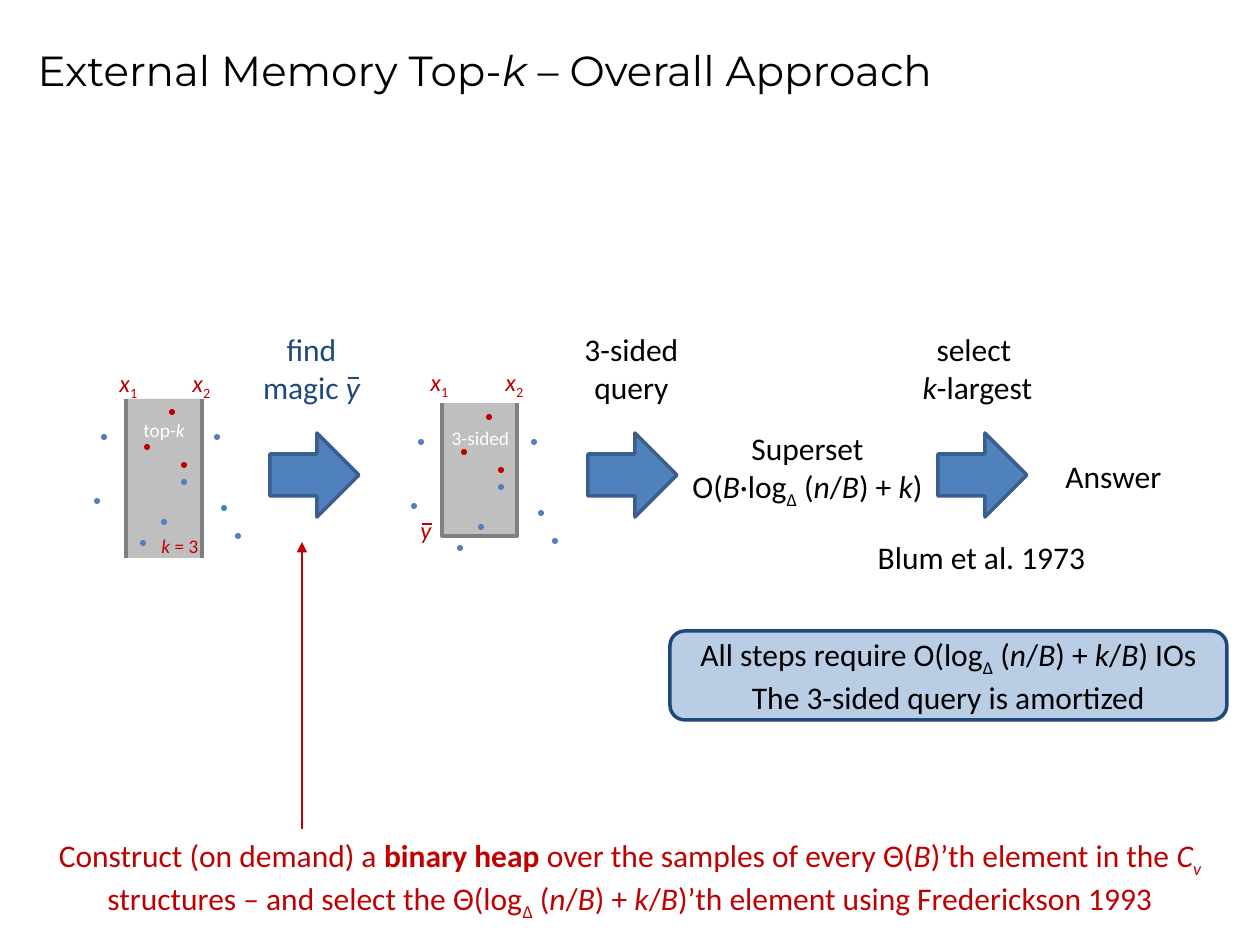
from lxml.etree import SubElement
from pptx import Presentation
from pptx.dml.color import RGBColor
from pptx.enum.shapes import MSO_CONNECTOR, MSO_SHAPE
from pptx.enum.text import MSO_ANCHOR, MSO_AUTO_SIZE, PP_ALIGN
from pptx.oxml.ns import qn
from pptx.util import Emu, Pt

PX = 914400 // 126
BLACK, WHITE, RED, NAVY, BLUE = "000000", "FFFFFF", "C00000", "1F497D", "4F81BD"
GREY, EDGE = "BFBFBF", "808080"
LEFT, CENTER = PP_ALIGN.LEFT, PP_ALIGN.CENTER

# Runs are (text, style): i italic, b bold, s subscript
TITLE = [("External Memory Top-", ""), ("k", "i"), (" – Overall Approach", "")]
LOG_N_B = [("Δ", "s"), (" (", ""), ("n", "i"), ("/", ""), ("B", "i"), (") + ", ""), ("k", "i")]
LOG_K_B = LOG_N_B + [("/", ""), ("B", "i")]
X1, X2 = [("x", "i"), ("1", "s")], [("x", "i"), ("2", "s")]

# Box, size, colour, alignment, paragraphs
BAR_LABELS = [
    ((126, 412, 76, 37), 11, WHITE, CENTER, [[("top-", ""), ("k", "i")]]),
    ((142, 528, 76, 37), 11, RED, CENTER, [[("k", "i"), (" = 3", "")]]),
    ((442, 420, 77, 45), 11, WHITE, CENTER, [[("3-sided", "")]]),
]
LABELS = [
    ((107, 362, 49, 43), 14, RED, LEFT, [X1]),
    ((180, 362, 49, 43), 14, RED, LEFT, [X2]),
    ((418, 361, 49, 43), 14, RED, LEFT, [X1]),
    ((493, 361, 49, 43), 14, RED, LEFT, [X2]),
    ((408, 509, 49, 43), 14, RED, LEFT, [[("y", "i")]]),
    ((241, 324, 141, 89), 18, NAVY, CENTER, [[("find magic ", ""), ("y", "i")]]),
    ((561, 324, 141, 89), 18, BLACK, CENTER, [[("3-sided", "")], [("query", "")]]),
    ((907, 324, 141, 89), 18, BLACK, CENTER,
     [[("select ", ""), ("\n", ""), ("k", "i"), ("-largest", "")]]),
    ((667, 423, 281, 89), 18, BLACK, CENTER,
     [[("Superset", "")], [("O(", ""), ("B", "i"), ("·log", ""), *LOG_N_B, (")", "")]]),
    ((1031, 451, 165, 50), 18, BLACK, CENTER, [[("Answer", "")]]),
    ((856, 532, 251, 50), 18, BLACK, CENTER, [[("Blum et al. 1973", "")]]),
    ((15, 830, 1230, 89), 18, RED, CENTER,
     [[("Construct (on demand) a ", ""), ("binary heap", "b"),
       (" over the samples of every Θ(", ""), ("B", "i"), (")’th element in the ", ""),
       ("C", "i"), ("v ", "is"), ("structures – and select the Θ(log", ""), *LOG_K_B,
       (")’th element using Frederickson 1993", "")]]),
]
COST_BOX = (670, 631, 557, 89)
COST = [[("All steps require O(log", ""), *LOG_K_B, (") IOs", "")],
        [("The 3-sided query is amortized", "")]]

TOP_K_BAR = (126, 399, 76, 159)
THREE_SIDED_BAR = (442, 403, 75, 133)
DOT = 6
DOT_CENTERS = {
    RED: [(172, 412), (184, 465), (147, 447)],
    BLUE: [(143, 543), (184, 482), (97, 501), (164, 522),
           (238, 536), (224, 508), (217, 437), (104, 437)],
}
PLOT_OFFSETS = [(0, 0), (317, 5)]
ARROW_LEFTS = [270, 588, 938]
OVERLINES = [((422, 524), (432, 524), RED), ((348, 378), (359, 378), NAVY)]
POINTER = ((302, 829), (302, 542), RED)


def px(*values):
    return [Emu(value * PX) for value in values]


def rgb(code):
    return RGBColor.from_string(code)


def paint(shape, fill, line=None, width=2):
    shape.shadow.inherit = False
    shape.fill.solid()
    shape.fill.fore_color.rgb = rgb(fill)
    if line:
        shape.line.color.rgb = rgb(line)
        shape.line.width = Pt(width)
    else:
        shape.line.fill.background()


def add_shape(page, kind, box, fill, line=None):
    shape = page.shapes.add_shape(kind, *px(*box))
    paint(shape, fill, line)
    return shape


def add_line(page, start, end, color, width=0.75):
    line = page.shapes.add_connector(MSO_CONNECTOR.STRAIGHT, *px(*start, *end))
    line.line.color.rgb = rgb(color)
    line.line.width = Pt(width)
    SubElement(line._element.spPr, qn("a:effectLst"))
    return line


def write(frame, paragraphs, size, color, align=CENTER, font="Calibri"):
    frame.word_wrap = True
    for index, runs in enumerate(paragraphs):
        para = frame.add_paragraph() if index else frame.paragraphs[0]
        para.alignment = align
        for text, style in runs:
            if text == "\n":
                para.add_line_break()
                continue
            span = para.add_run()
            span.text = text
            span.font.name, span.font.size = font, Pt(size)
            span.font.color.rgb = rgb(color)
            span.font.italic = "i" in style
            span.font.bold = "b" in style
            if "s" in style:
                span._r.get_or_add_rPr().set("baseline", "-25000")


def add_label(page, box, size, color, align, paragraphs):
    frame = page.shapes.add_textbox(*px(*box)).text_frame
    write(frame, paragraphs, size, color, align)
    return frame


def add_title(page):
    title = page.shapes.title
    title.left, title.top, title.width, title.height = px(25, 38, 1172, 158)
    frame = title.text_frame
    frame.vertical_anchor = MSO_ANCHOR.TOP
    frame.auto_size = MSO_AUTO_SIZE.NONE
    write(frame, [TITLE], 24, BLACK, LEFT, "Montserrat")


def add_bars(page):
    left, top, width, height = TOP_K_BAR
    add_shape(page, MSO_SHAPE.RECTANGLE, TOP_K_BAR, GREY)
    for x in (left, left + width):
        add_line(page, (x, top), (x, top + height), EDGE, 2.25)

    left, top, width, height = THREE_SIDED_BAR
    right, bottom = left + width, top + height
    builder = page.shapes.build_freeform(left, top, scale=PX)
    builder.add_line_segments([(left, bottom), (right, bottom), (right, top)], close=False)
    paint(builder.convert_to_shape(), GREY, EDGE, 2.25)

    for label in BAR_LABELS:
        frame = add_label(page, *label)
        frame.margin_left = frame.margin_right = 0


def add_dots(page):
    for dx, dy in PLOT_OFFSETS:
        for color, centers in DOT_CENTERS.items():
            for x, y in centers:
                box = (x + dx - DOT // 2, y + dy - DOT // 2, DOT, DOT)
                add_shape(page, MSO_SHAPE.OVAL, box, color)


def main():
    deck = Presentation()
    deck.slide_width, deck.slide_height = px(1260, 945)
    page = deck.slides.add_slide(deck.slide_layouts[5])
    add_title(page)
    add_bars(page)
    for left in ARROW_LEFTS:
        add_shape(page, MSO_SHAPE.RIGHT_ARROW, (left, 433, 89, 84), BLUE, "3A5F8C")
    for label in LABELS:
        add_label(page, *label)
    add_dots(page)
    for start, end, color in OVERLINES:
        add_line(page, start, end, color)
    pointer = add_line(page, *POINTER)
    SubElement(pointer.line._get_or_add_ln(), qn("a:tailEnd"), type="triangle")
    cost = add_shape(page, MSO_SHAPE.ROUNDED_RECTANGLE, COST_BOX, "B9CDE5", NAVY)
    cost.text_frame.vertical_anchor = MSO_ANCHOR.MIDDLE
    write(cost.text_frame, COST, 18, BLACK)
    deck.save("out.pptx")


if __name__ == "__main__":
    main()
